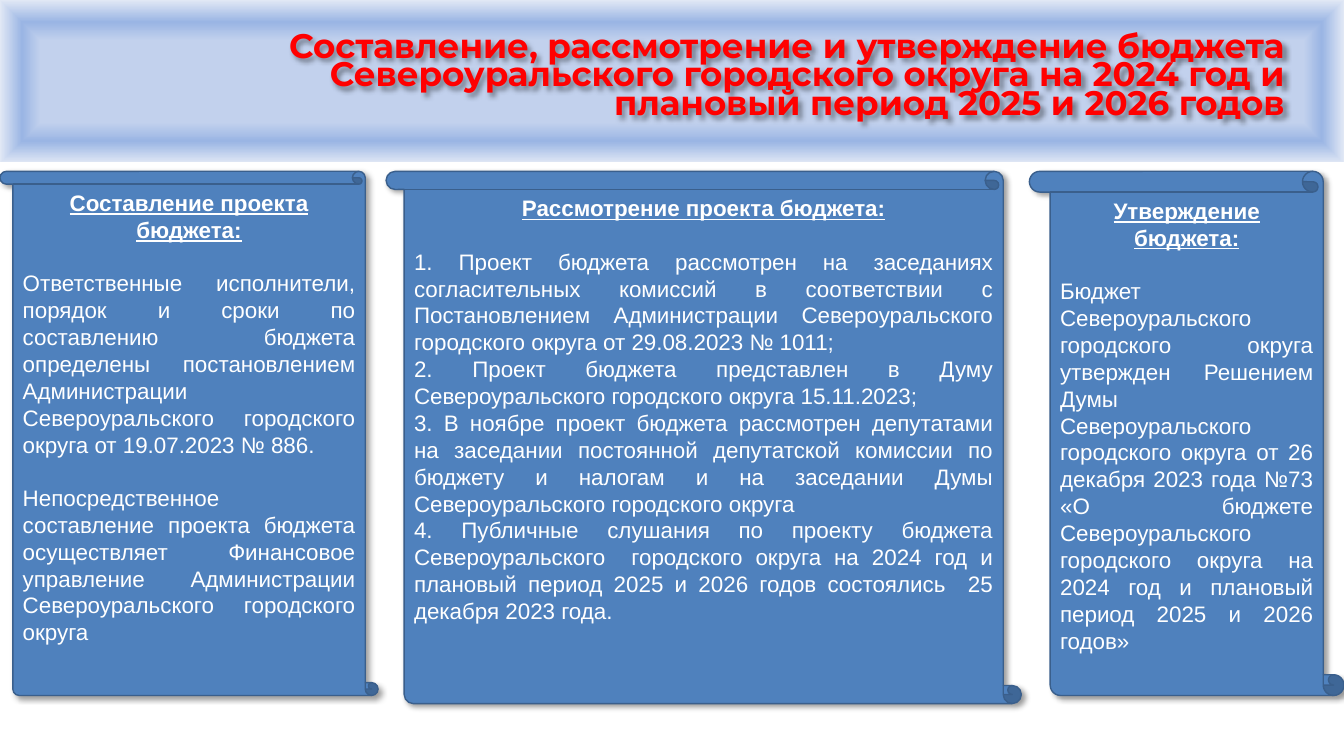
from lxml import etree
from pptx import Presentation
from pptx.dml.color import RGBColor
from pptx.enum.shapes import MSO_CONNECTOR, MSO_SHAPE
from pptx.enum.text import MSO_ANCHOR, PP_ALIGN
from pptx.oxml import parse_xml
from pptx.oxml.ns import nsdecls, qn
from pptx.util import Inches, Pt

RECT, SCROLL = MSO_SHAPE.RECTANGLE, MSO_SHAPE.VERTICAL_SCROLL
STRAIGHT = MSO_CONNECTOR.STRAIGHT
TOP, BOTTOM = MSO_ANCHOR.TOP, MSO_ANCHOR.BOTTOM
CENTER, RIGHT, JUSTIFY = PP_ALIGN.CENTER, PP_ALIGN.RIGHT, PP_ALIGN.JUSTIFY
WIDTH, HEIGHT = 13.33, 7.5
HEADER_HEIGHT = 1.62
SCROLL_TOP = 1.7
BLANK_LINE = 19
HEADER_STOPS = [(0, "C2D1ED"), (50, "C2D1ED"), (73, "9AB5E4"), (100, "E1E8F5")]

TITLE = ("Составление, рассмотрение и утверждение бюджета Североуральского "
         "городского округа на 2024 год и плановый период 2025 и 2026 годов")
DRAFTING = [
    ("Ответственные исполнители, порядок и сроки по составлению бюджета определены "
     "постановлением Администрации Североуральского городского округа "
     "от 19.07.2023 № 886.", BLANK_LINE),
    ("Непосредственное составление проекта бюджета осуществляет Финансовое управление "
     "Администрации Североуральского городского округа", BLANK_LINE),
]
REVIEW = [
    ("1. Проект бюджета рассмотрен на заседаниях согласительных комиссий в соответствии "
     "с Постановлением Администрации Североуральского городского округа "
     "от 29.08.2023 № 1011;", BLANK_LINE),
    ("2. Проект бюджета представлен в Думу Североуральского городского округа "
     "15.11.2023;", 0),
    ("3. В ноябре проект бюджета рассмотрен депутатами на заседании постоянной "
     "депутатской комиссии по бюджету и налогам и на заседании Думы "
     "Североуральского городского округа", 0),
    ("4. Публичные слушания по проекту бюджета Североуральского  городского округа на "
     "2024 год и плановый период 2025 и 2026 годов состоялись  25 декабря 2023 года.", 0),
]
APPROVAL = [
    ("Бюджет Североуральского городского округа утвержден Решением Думы "
     "Североуральского городского округа от 26 декабря 2023 года №73 «О бюджете "
     "Североуральского городского округа на 2024 год и плановый период "
     "2025 и 2026 годов»", BLANK_LINE),
]
SCROLLS = [
    (0, 3.75, 5.2, 0.034, "Составление проекта бюджета:", DRAFTING),
    (3.83, 6.3, 5.28, 0.034, "Рассмотрение проекта бюджета:", REVIEW),
    (10.21, 3.12, 5.2, 0.066, "Утверждение бюджета:", APPROVAL),
]


def color(hex_value):
    """Turn a hex string into a colour."""
    return RGBColor.from_string(hex_value)


def add_shadow(sp):
    """Give a shape a soft shadow to the lower right."""
    sp.shadow.inherit = False
    effects = sp._element.spPr.find(qn("a:effectLst"))
    effects.append(parse_xml(
        f'<a:outerShdw {nsdecls("a")} blurRad="50800" dist="38100" dir="2700000" '
        'algn="tl" rotWithShape="0"><a:srgbClr val="000000"><a:alpha val="40000"/>'
        '</a:srgbClr></a:outerShdw>'))


def add_text(p, text, size=16, font="Arial", fill="FFFFFF", bold=False,
             underline=False, align=JUSTIFY, before=0, spacing=None):
    """Write one formatted run into a paragraph and return the run."""
    p.alignment = align
    if before:
        p.space_before = Pt(before)
    if spacing:
        p.line_spacing = spacing
    r = p.add_run()
    r.text = text
    r.font.size, r.font.name = Pt(size), font
    r.font.bold, r.font.underline = bold, underline
    r.font.color.rgb = color(fill)
    return r


def add_header(s):
    """Draw the gradient band and the white line below it."""
    sp = s.shapes.add_shape(RECT, 0, 0, Inches(WIDTH), Inches(HEADER_HEIGHT))
    sp.shadow.inherit = False
    sp.line.fill.background()
    stops = "".join(f'<a:gs pos="{pos * 1000}"><a:srgbClr val="{value}"/></a:gs>'
                    for pos, value in HEADER_STOPS)
    sp._element.spPr.find(qn("a:prstGeom")).addnext(parse_xml(
        f'<a:gradFill {nsdecls("a")} rotWithShape="1"><a:gsLst>{stops}</a:gsLst>'
        '<a:path path="shape"><a:fillToRect l="50000" t="50000" r="50000" b="50000"/>'
        '</a:path></a:gradFill>'))
    y = Inches(HEADER_HEIGHT)
    line = s.shapes.add_connector(STRAIGHT, 0, y, Inches(WIDTH), y)
    line.line.color.rgb = color("FFFFFF")
    line.line.width = Pt(2)
    etree.SubElement(line._element.spPr, qn("a:effectLst"))


def add_scroll(s, left, width, height, curl, heading, paragraphs):
    """Draw a mirrored scroll with a heading and justified paragraphs."""
    sp = s.shapes.add_shape(SCROLL, Inches(left), Inches(SCROLL_TOP),
                            Inches(width), Inches(height))
    sp.adjustments[0] = curl
    sp._element.spPr.xfrm.set("flipH", "1")
    sp.fill.solid()
    sp.fill.fore_color.rgb = color("4F81BD")
    sp.line.color.rgb = color("3A5F8C")
    sp.line.width = Pt(1)
    add_shadow(sp)
    tf = sp.text_frame
    tf.word_wrap, tf.vertical_anchor = True, TOP
    add_text(tf.paragraphs[0], heading, bold=True, underline=True, align=CENTER)
    for text, before in paragraphs:
        add_text(tf.add_paragraph(), text, before=before)


def add_title(s):
    """Write the shadowed red title in the header band."""
    sp = s.shapes.add_textbox(Inches(2.65), Inches(0.16), Inches(10.19), Inches(1.09))
    add_shadow(sp)
    tf = sp.text_frame
    tf.word_wrap, tf.vertical_anchor = True, BOTTOM
    r = add_text(tf.paragraphs[0], TITLE, size=24.3, font="Montserrat", fill="FF0000",
                 bold=True, align=RIGHT, spacing=0.7)
    r.font._element.insert(0, parse_xml(
        f'<a:ln {nsdecls("a")} w="19050"><a:solidFill><a:srgbClr val="FFFFFF"/>'
        '</a:solidFill></a:ln>'))


def main():
    """Build the slide and save it."""
    prs = Presentation()
    prs.slide_width, prs.slide_height = Inches(WIDTH), Inches(HEIGHT)
    s = prs.slides.add_slide(prs.slide_layouts[6])
    add_header(s)
    for scroll in SCROLLS:
        add_scroll(s, *scroll)
    add_title(s)
    prs.save("out.pptx")


if __name__ == "__main__":
    main()
